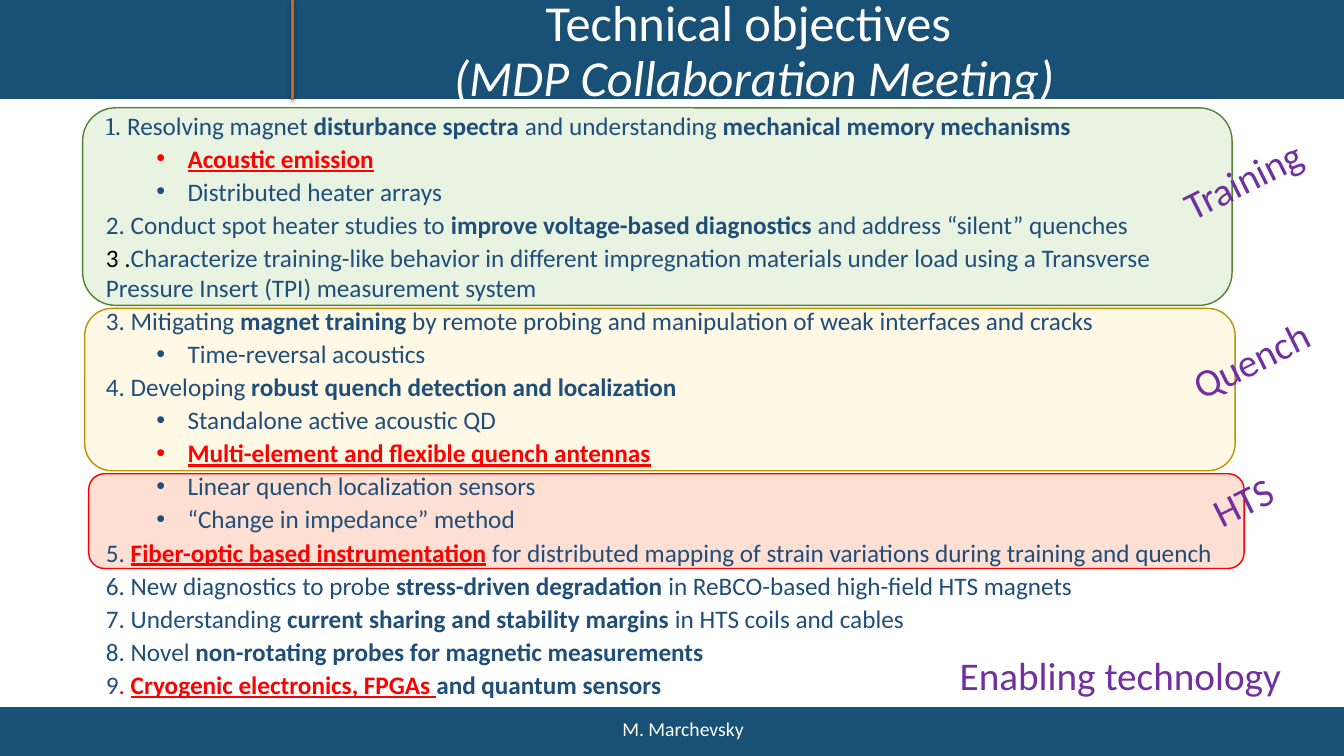
from lxml.etree import SubElement
from pptx import Presentation
from pptx.dml.color import RGBColor
from pptx.enum.shapes import MSO_CONNECTOR as Connector, MSO_SHAPE as Shape
from pptx.enum.text import MSO_ANCHOR as Anchor, MSO_AUTO_SIZE as AutoSize, PP_ALIGN as Align
from pptx.oxml.ns import qn
from pptx.util import Emu, Pt

PX = 9144
WIDTH, HEIGHT = 1333, 750
BLUE, NAVY, RED, PURPLE, WHITE = "195075", "1F4E79", "FF0000", "7030A0", "FFFFFF"

PLAIN = {}
BOLD = {"bold": True}
HOT = {"bold": True, "underline": True, "color": RED}

OBJECTIVES = [
    (0, [("1", {"font": "Cambria"}), (". Resolving magnet", PLAIN), (" disturbance spectra", BOLD),
         (" and understanding", PLAIN), (" mechanical memory mechanisms", BOLD)]),
    (1, [("Acoustic emission", HOT)]),
    (1, [("Distributed heater arrays", PLAIN)]),
    (0, [("2. Conduct spot heater studies to ", PLAIN), ("improve voltage-based diagnostics", BOLD),
         (" and address “silent” quenches", PLAIN)]),
    (0, [("3 .", {"color": "000000"}),
         ("Characterize training-like behavior in different impregnation materials under load "
          "using a Transverse Pressure Insert (TPI) measurement system", PLAIN)]),
    (0, [("3. Mitigating ", PLAIN), ("magnet training", BOLD),
         (" by remote probing and manipulation of weak interfaces and cracks", PLAIN)]),
    (1, [("Time-reversal acoustics", PLAIN)]),
    (0, [("4. Developing ", PLAIN), ("robust quench detection and localization", BOLD)]),
    (1, [("Standalone active acoustic QD", PLAIN)]),
    (1, [("Multi-element and flexible quench antennas", HOT)]),
    (1, [("Linear quench localization sensors", PLAIN)]),
    (1, [("“Change in impedance” method", PLAIN)]),
    (0, [("5. ", PLAIN), ("Fiber-optic based instrumentation", HOT),
         (" for distributed mapping of strain variations during training and quench", PLAIN)]),
    (0, [("6. New diagnostics to probe ", PLAIN), ("stress-driven degradation ", BOLD),
         ("in ReBCO-based high-field HTS magnets", PLAIN)]),
    (0, [("7. Understanding ", PLAIN), ("current sharing and stability margins", BOLD),
         (" in HTS coils and cables", PLAIN)]),
    (0, [("8. Novel ", PLAIN), ("non-rotating probes for magnetic measurements", BOLD)]),
    (0, [("9", PLAIN), (". ", {"color": RED}), ("Cryogenic electronics, FPGAs ", HOT),
         ("and quantum sensors", BOLD)]),
]


def px(*lengths):
    return [Emu(length * PX) for length in lengths]


def rgb(color):
    return RGBColor.from_string(color)


def add_text(para, text, size=18, color=NAVY, font="Calibri", bold=False, italic=False,
             underline=False):
    span = para.add_run()
    span.text = text
    style = span.font
    style.name, style.size, style.bold, style.italic = font, Pt(size), bold, italic
    style.underline = underline
    style.color.rgb = rgb(color)


def set_bullet(para, level):
    para.level = level
    properties = para._p.get_or_add_pPr()
    margin, indent = px(81, -31) if level else px(0, 0)
    properties.set("marL", str(margin))
    properties.set("indent", str(indent))
    if level:
        SubElement(properties, qn("a:buFont"), typeface="Arial")
        SubElement(properties, qn("a:buChar"), char="•")
    else:
        SubElement(properties, qn("a:buNone"))


class SlideBuilder:
    def __init__(self, deck):
        self.page = deck.slides.add_slide(deck.slide_layouts[1])
        self.shapes = self.page.shapes

    def box(self, place, fill, line, weight=1, kind=Shape.RECTANGLE, alpha=None):
        box = self.shapes.add_shape(kind, *px(*place))
        box.shadow.inherit = False
        box.fill.solid()
        box.fill.fore_color.rgb = rgb(fill)
        box.line.color.rgb = rgb(line)
        box.line.width = Pt(weight)
        if alpha:
            color = box._element.spPr.find(qn("a:solidFill")).find(qn("a:srgbClr"))
            SubElement(color, qn("a:alpha"), val=str(alpha * 1000))

    def divider(self, start, end, color):
        line = self.shapes.add_connector(Connector.STRAIGHT, *px(*start, *end))
        line.line.color.rgb = rgb(color)
        line.line.width = Pt(2)
        effects = SubElement(line._element.spPr, qn("a:effectLst"))
        shadow = SubElement(effects, qn("a:outerShdw"), blurRad=str(Pt(3)), dist=str(Pt(1.6)),
                            dir="5400000", rotWithShape="0")
        shade = SubElement(shadow, qn("a:srgbClr"), val="000000")
        SubElement(shade, qn("a:alpha"), val="38000")

    def label(self, place, text, rotation=0, wrap=False, align=Align.LEFT, **style):
        box = self.shapes.add_textbox(*px(*place))
        box.rotation = rotation
        frame = box.text_frame
        frame.word_wrap = wrap
        frame.auto_size = AutoSize.SHAPE_TO_FIT_TEXT
        para = frame.paragraphs[0]
        para.alignment = align
        add_text(para, text, **style)

    def placeholder(self, holder, place, anchor):
        holder.left, holder.top, holder.width, holder.height = px(*place)
        self.shapes._spTree.append(holder._element)
        frame = holder.text_frame
        frame.word_wrap = True
        frame.auto_size = AutoSize.NONE
        frame.vertical_anchor = anchor
        return frame

    def title(self, place, heading, subheading):
        frame = self.placeholder(self.shapes.title, place, Anchor.MIDDLE)
        para = frame.paragraphs[0]
        para.alignment = Align.CENTER
        para.line_spacing = 0.9
        add_text(para, heading, size=36, color=WHITE)
        para.add_line_break()
        add_text(para, subheading, size=36, color=WHITE, italic=True)

    def body(self, place, items):
        frame = self.placeholder(self.page.placeholders[1], place, Anchor.TOP)
        for index, (level, spans) in enumerate(items):
            para = frame.add_paragraph() if index else frame.paragraphs[0]
            set_bullet(para, level)
            para.space_before = Pt(2 if index else 0)
            para.alignment = Align.LEFT
            for text, style in spans:
                add_text(para, text, **style)


def main():
    deck = Presentation()
    deck.slide_width, deck.slide_height = px(WIDTH, HEIGHT)
    slide = SlideBuilder(deck)

    slide.box((0, 702, WIDTH, 48), BLUE, BLUE)
    slide.box((0, 0, WIDTH, 98), BLUE, BLUE, weight=0.5)
    slide.divider((290, 99), (290, 0), "D06318")
    slide.label((344, 706, 667, 34), "M. Marchevsky", wrap=True, align=Align.CENTER,
                size=14, color=WHITE)

    for place, fill, line in [
        ((88, 470, 1146, 94), "FD8251", RED),
        ((84, 306, 1141, 161), "FFE699", "BF9000"),
        ((82, 107, 1140, 196), "A9D18E", "548235"),
    ]:
        slide.box(place, fill, line, kind=Shape.ROUNDED_RECTANGLE, alpha=25)

    slide.title((289, 13, 918, 79), "Technical objectives ", "(MDP Collaboration Meeting)")
    slide.body((95, 104, 1139, 600), OBJECTIVES)

    for place, text, rotation, wrap in [
        ((1160, 149, 146, 57), "Training", 333.5, False),
        ((1168, 324, 161, 57), "Quench", 333.5, True),
        ((1192, 468, 82, 57), "HTS", 333.5, False),
        ((942, 641, 342, 57), "Enabling technology", 0, False),
    ]:
        slide.label(place, text, rotation, wrap, size=28, color=PURPLE)

    deck.save("out.pptx")


if __name__ == "__main__":
    main()
